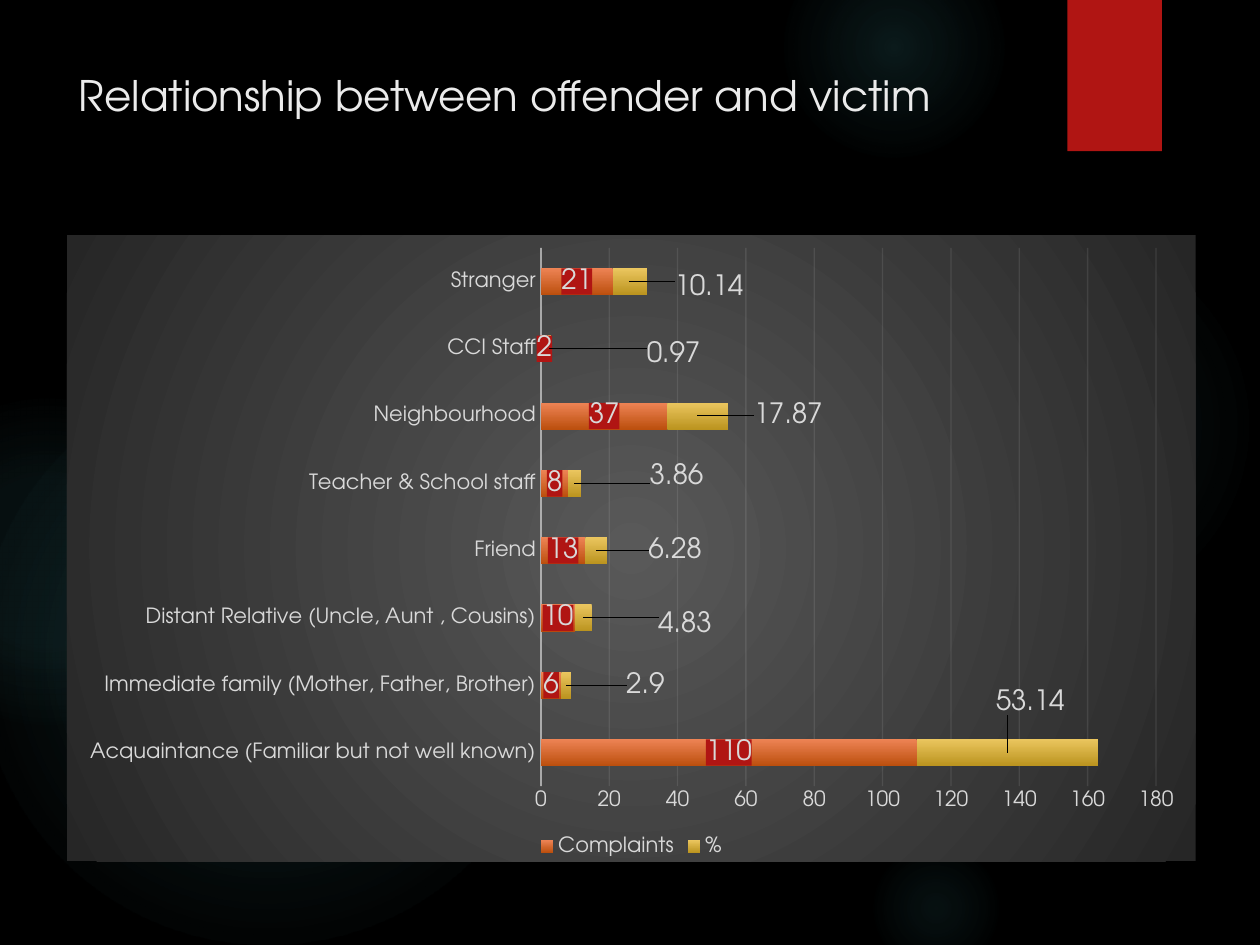
from lxml.etree import SubElement
from pptx import Presentation
from pptx.chart.data import CategoryChartData
from pptx.dml.color import RGBColor
from pptx.enum.chart import (XL_CHART_TYPE, XL_LABEL_POSITION,
                             XL_LEGEND_POSITION, XL_TICK_MARK)
from pptx.enum.shapes import MSO_SHAPE
from pptx.enum.text import MSO_ANCHOR
from pptx.oxml import parse_xml
from pptx.oxml.ns import nsdecls, qn
from pptx.util import Pt

FONT = "TeX Gyre Adventor"
COLORS = {
    "back": "000000", "glow": "50B9C1", "red": "B01513", "title": "EBEBEB",
    "label": "D9D9D9", "line": "F2F2F2", "white": "FFFFFF",
    "panel": "595959", "edge": "262626",
    "orange": "EE8455", "rust": "BC4F0E", "gold": "EBC65F", "ochre": "BB941F",
}
# left, top, size, then (stop, opacity) in percent
GLOWS = [
    (496, 132, 222, [(0, 7), (36, 6), (69, 0)]),
    (448, -36, 126, [(0, 14), (36, 7), (73, 0)]),
    (496, 480, 78, [(0, 9), (36, 5), (66, 0)]),
    (-12, 210, 330, [(0, 11), (36, 10), (75, 0)]),
    (-66, 228, 186, [(0, 8), (36, 8), (72, 0)]),
]
# category, complaints, percent, shift of the percent label (share of chart)
ROWS = [
    ("Acquaintance (Familiar but not well known)", 110, 53.14, 0.02, -0.08),
    ("Immediate family (Mother, Father, Brother)", 6, 2.9, 0.07, 0),
    ("Distant Relative (Uncle, Aunt , Cousins)", 10, 4.83, 0.09, 0.01),
    ("Friend", 13, 6.28, 0.07, 0),
    ("Teacher & School staff", 8, 3.86, 0.09, -0.01),
    ("Neighbourhood", 37, 17.87, 0.08, 0),
    ("CCI Staff", 2, 0.97, 0.11, 0.01),
    ("Stranger", 21, 10.14, 0.07, 0.01),
]


def rgb(name):
    return RGBColor.from_string(COLORS[name])


def grad(stops, radial=False):
    """Gradient fill from (percent, colour name, opacity percent) stops."""
    marks = "".join(
        f'<a:gs pos="{pos * 1000}"><a:srgbClr val="{COLORS[name]}">'
        f'<a:alpha val="{alpha * 1000}"/></a:srgbClr></a:gs>'
        for pos, name, alpha in stops)
    kind = ('<a:path path="circle"><a:fillToRect l="50000" t="50000" '
            'r="50000" b="50000"/></a:path>' if radial
            else '<a:lin ang="5400000" scaled="0"/>')
    return parse_xml(f'<a:gradFill {nsdecls("a")} rotWithShape="1">'
                     f'<a:gsLst>{marks}</a:gsLst>{kind}</a:gradFill>')


def place(x, y, size=None):
    """Manual chart layout; without a size it is a label shift."""
    target = '<c:layoutTarget val="inner"/>' if size else ""
    parts = {"x": x, "y": y}
    if size:
        target += '<c:xMode val="edge"/><c:yMode val="edge"/>'
        parts.update(w=size[0], h=size[1])
    body = "".join(f'<c:{key} val="{val}"/>' for key, val in parts.items())
    return parse_xml(f'<c:layout {nsdecls("c")}><c:manualLayout>{target}{body}'
                     '</c:manualLayout></c:layout>')


def style(font, size, color):
    font.name, font.size = FONT, Pt(size)
    font.color.rgb = rgb(color)


def rule(line, width, alpha):
    """Pale line of the given width and opacity percent."""
    line.width = Pt(width)
    line.color.rgb = rgb("line")
    tone = line._get_or_add_ln().find(".//" + qn("a:srgbClr"))
    SubElement(tone, qn("a:alpha"), val=str(alpha * 1000))


class Deck:
    def __init__(self):
        self.prs = Presentation()
        self.prs.slide_width, self.prs.slide_height = Pt(720), Pt(540)
        self.slide = self.prs.slides.add_slide(self.prs.slide_layouts[6])
        fill = self.slide.background.fill
        fill.solid()
        fill.fore_color.rgb = rgb("back")

    def shape(self, kind, *box):
        item = self.slide.shapes.add_shape(kind, *map(Pt, box))
        item.shadow.inherit = False
        item.line.fill.background()
        return item

    def glow(self, left, top, size, stops):
        item = self.shape(MSO_SHAPE.OVAL, left, top, size, size)
        fill = grad([(pos, "glow", alpha) for pos, alpha in stops], True)
        item._element.spPr.find(qn("a:prstGeom")).addnext(fill)

    def flag(self, *box):
        item = self.shape(MSO_SHAPE.RECTANGLE, *box)
        item.fill.solid()
        item.fill.fore_color.rgb = rgb("red")
        shade = SubElement(item._element.spPr.find(qn("a:effectLst")),
                           qn("a:outerShdw"), blurRad=str(Pt(3)),
                           dist=str(Pt(2)), dir="5400000", rotWithShape="0")
        tone = SubElement(shade, qn("a:srgbClr"), val=COLORS["back"])
        SubElement(tone, qn("a:alpha"), val="45000")

    def title(self, text, *box):
        frame = self.slide.shapes.add_textbox(*map(Pt, box)).text_frame
        frame.word_wrap = True
        frame.vertical_anchor = MSO_ANCHOR.TOP
        run = frame.paragraphs[0].add_run()
        run.text = text
        style(run.font, 24, "title")

    def chart(self, *box):
        data = CategoryChartData()
        data.categories = [row[0] for row in ROWS]
        data.add_series("Complaints", [row[1] for row in ROWS])
        data.add_series("%", [row[2] for row in ROWS])
        chart = self.slide.shapes.add_chart(
            XL_CHART_TYPE.BAR_STACKED, *map(Pt, box), data).chart
        style(chart.font, 10, "white")
        chart.has_title = False
        chart.has_legend = True
        chart.legend.position = XL_LEGEND_POSITION.BOTTOM
        chart.legend.include_in_layout = False
        style(chart.legend.font, 12, "label")
        self.axes(chart)
        self.bars(chart.plots[0])
        self.panel(chart)

    def axes(self, chart):
        cat, val = chart.category_axis, chart.value_axis
        for axis in (cat, val):
            axis.major_tick_mark = axis.minor_tick_mark = XL_TICK_MARK.NONE
            style(axis.tick_labels.font, 12, "label")
        rule(cat.format.line, 1, 54)
        val.minimum_scale, val.maximum_scale, val.major_unit = 0, 180, 20
        val.format.line.fill.background()
        val.has_major_gridlines = True
        rule(val.major_gridlines.format.line, 0.75, 10)

    def bars(self, plot):
        plot.gap_width, plot.overlap = 150, 100
        plot.vary_by_categories = False
        tones = [("orange", "rust"), ("gold", "ochre")]
        for bar, (top, low) in zip(plot.series, tones):
            fill = grad([(0, top, 100), (100, low, 100)])
            bar._element.get_or_add_spPr().insert(0, fill)
            labels = bar.data_labels
            labels.show_value = True
            labels.position = XL_LABEL_POSITION.CENTER
            style(labels.font, 16, "label")
        count, share = plot.series
        count.data_labels._element.find(qn("c:txPr")).addprevious(parse_xml(
            f'<c:spPr {nsdecls("c", "a")}><a:solidFill><a:srgbClr '
            f'val="{COLORS["red"]}"/></a:solidFill></c:spPr>'))
        for num, row in enumerate(ROWS):
            label = share.points[num].data_label
            label.position = XL_LABEL_POSITION.CENTER
            style(label.font, 16, "label")
            label._dLbl.find(qn("c:idx")).addnext(place(*row[3:]))

    def panel(self, chart):
        """Set the chart's backdrop and the place of its plot."""
        root = chart._chartSpace
        back = parse_xml(f'<c:spPr {nsdecls("c", "a")}>'
                         '<a:ln><a:noFill/></a:ln></c:spPr>')
        back.insert(0, grad([(0, "panel", 100), (100, "edge", 100)], True))
        root.find(qn("c:chart")).addnext(back)
        area = root.find(".//" + qn("c:plotArea"))
        for old in area.findall(qn("c:layout")):
            area.remove(old)
        area.insert(0, place(0.42, 0.02, (0.545, 0.86)))


def main():
    deck = Deck()
    for spot in GLOWS:
        deck.glow(*spot)
    deck.flag(610, 0, 54, 86.4)
    deck.title("Relationship between offender and victim", 38, 36, 577, 110)
    deck.chart(38.2, 134.5, 645, 357.7)
    deck.prs.save("out.pptx")


if __name__ == "__main__":
    main()
